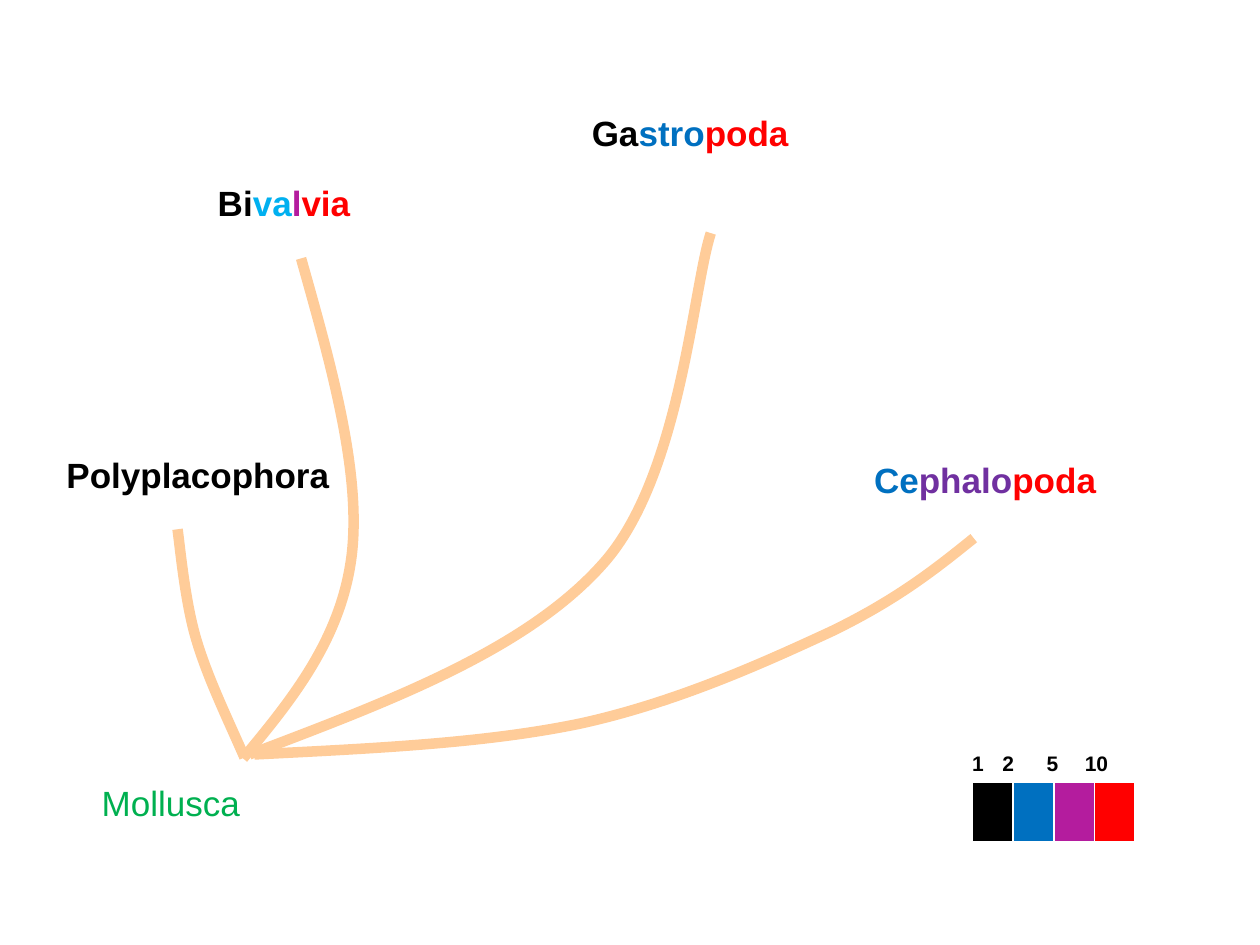
from lxml import etree
from pptx import Presentation
from pptx.dml.color import RGBColor
from pptx.enum import shapes, text
from pptx.oxml import ns
from pptx.util import Cm, Pt

COLORS = {
    "black": "000000", "white": "FFFFFF", "blue": "0070C0", "sky": "00B0F0",
    "magenta": "B41C9E", "purple": "7030A0", "red": "FF0000",
    "green": "00B050", "branch": "FFCC99",
}

BRANCHES = {
    "Polyplacophora": [
        (4.93, 15.27), (4.57, 14.45), (4.19, 13.67), (3.96, 12.9),
        (3.73, 12.14), (3.63, 11.02), (3.58, 10.67)],
    "Bivalvia": [
        (4.9, 15.29), (5.89, 14.1), (6.88, 12.88), (7.09, 11.2),
        (7.29, 9.53), (6.68, 7.37), (6.07, 5.21)],
    "Gastropoda": [
        (5.03, 15.21), (7.82, 14.15), (10.62, 13.11), (12.17, 11.35),
        (13.72, 9.6), (13.97, 5.79), (14.33, 4.7)],
    "Cephalopoda": [
        (5.13, 15.21), (7.47, 15.09), (9.78, 14.99), (11.73, 14.58),
        (13.67, 14.15), (15.44, 13.34), (16.76, 12.73),
        (18.08, 12.09), (18.85, 11.48), (19.63, 10.85)],
}

CLASS_FORMAT = {"name": "Arial", "size": Pt(20), "bold": True}
PHYLUM_FORMAT = {"name": "Arial", "size": Pt(20), "bold": False}
LEGEND_FORMAT = {"name": "Arial", "size": Pt(12), "bold": True}

LABELS = [
    (1.09, 9.02, 5.87, [("Polyplacophora", "black")], CLASS_FORMAT),
    (11.68, 2.13, 4.52,
     [("Ga", "black"), ("stro", "blue"), ("poda", "red")], CLASS_FORMAT),
    (4.14, 3.53, 3.2,
     [("Bi", "black"), ("va", "sky"), ("l", "magenta"), ("via", "red")], CLASS_FORMAT),
    (17.37, 9.12, 5.03,
     [("Ce", "blue"), ("phalo", "purple"), ("poda", "red")], CLASS_FORMAT),
    (1.8, 15.62, 3.33, [("Mollusca", "green")], PHYLUM_FORMAT),
]
LABEL_HEIGHT = 1.12

LEGEND = [
    ("1", 19.35, 0.74, "black"),
    ("2", 19.96, 0.74, "blue"),
    ("5", 20.85, 0.74, "magenta"),
    ("10", 21.62, 0.97, "red"),
]
NUMBER_TOP, NUMBER_HEIGHT = 15.01, 0.76
SWATCH_LEFT, SWATCH_TOP, SWATCH_STEP = 19.61, 15.77, 0.82
SWATCH_WIDTH, SWATCH_HEIGHT = 0.81, 1.19


def color(name):
    return RGBColor.from_string(COLORS[name])


def set_line(shape, name, width):
    shape.shadow.inherit = False
    shape.line.color.rgb = color(name)
    shape.line.width = Pt(width)


def add_branch(slide, points):
    points = [(Cm(x), Cm(y)) for x, y in points]
    builder = slide.shapes.build_freeform(*points[0])
    builder.add_line_segments(points[1:], close=False)
    shape = builder.convert_to_shape()
    outline = shape._element.find(".//" + ns.qn("a:path"))
    segments = outline.findall(ns.qn("a:lnTo"))
    for start in range(0, len(segments), 3):
        curve = etree.SubElement(outline, ns.qn("a:cubicBezTo"))
        for segment in segments[start:start + 3]:
            curve.append(segment[0])
            outline.remove(segment)
    shape.fill.background()
    set_line(shape, "branch", 6)


def add_label(slide, left, top, width, height, runs, font_format):
    box = slide.shapes.add_textbox(Cm(left), Cm(top), Cm(width), Cm(height))
    frame = box.text_frame
    frame.word_wrap = False
    frame.auto_size = text.MSO_AUTO_SIZE.SHAPE_TO_FIT_TEXT
    for content, name in runs:
        run = frame.paragraphs[0].add_run()
        run.text = content
        run.font.color.rgb = color(name)
        for attribute, value in font_format.items():
            setattr(run.font, attribute, value)


def add_swatch(slide, index, name):
    shape = slide.shapes.add_shape(
        shapes.MSO_SHAPE.RECTANGLE, Cm(SWATCH_LEFT + index * SWATCH_STEP),
        Cm(SWATCH_TOP), Cm(SWATCH_WIDTH), Cm(SWATCH_HEIGHT))
    shape.fill.solid()
    shape.fill.fore_color.rgb = color(name)
    set_line(shape, "white", 0.75)


def main():
    presentation = Presentation()
    presentation.slide_width, presentation.slide_height = Cm(25.4), Cm(19.05)
    slide = presentation.slides.add_slide(presentation.slide_layouts[6])
    for points in BRANCHES.values():
        add_branch(slide, points)
    for index, (number, left, width, name) in enumerate(LEGEND):
        add_swatch(slide, index, name)
        add_label(slide, left, NUMBER_TOP, width, NUMBER_HEIGHT,
                  [(number, "black")], LEGEND_FORMAT)
    for left, top, width, runs, font_format in LABELS:
        add_label(slide, left, top, width, LABEL_HEIGHT, runs, font_format)
    presentation.save("out.pptx")


if __name__ == "__main__":
    main()
